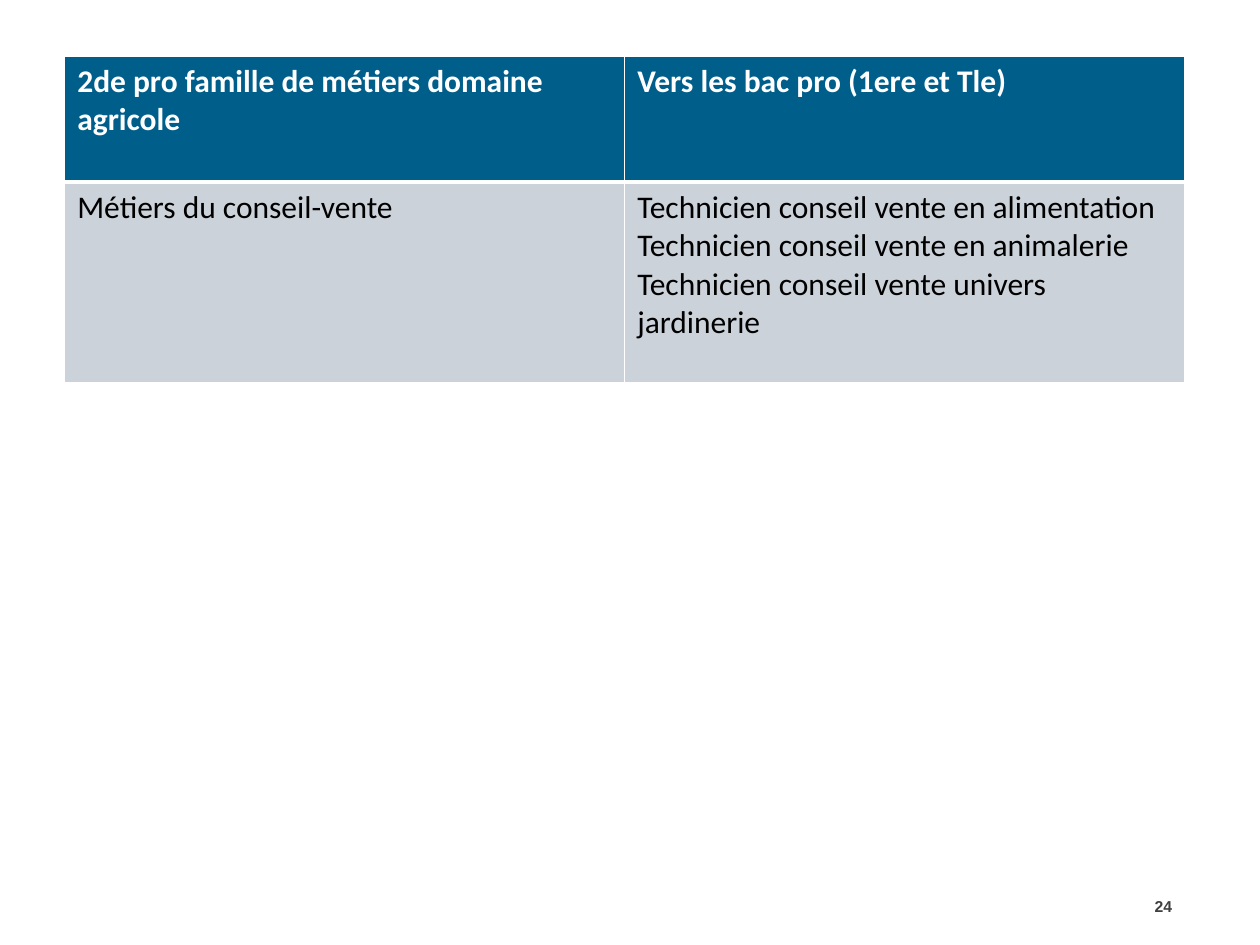
from dataclasses import dataclass

from lxml.etree import SubElement
from pptx import Presentation
from pptx.dml.color import RGBColor
from pptx.enum.text import MSO_ANCHOR, PP_ALIGN
from pptx.oxml.ns import qn
from pptx.util import Pt


@dataclass(frozen=True)
class Theme:
    header_fill: str = "005E8B"
    body_fill: str = "CCD2DA"
    white: str = "FFFFFF"
    black: str = "000000"
    grey: str = "404040"
    table_font: str = "Calibri"
    number_font: str = "Arial"
    table_size: float = 18
    number_size: float = 9
    thin_line: float = 1
    thick_line: float = 3


THEME = Theme()

HEADERS = [
    "2de pro famille de métiers domaine agricole",
    "Vers les bac pro (1ere et Tle)",
]
TRACKS = [
    "Métiers du conseil-vente",
    "Technicien conseil vente en alimentation\n"
    "Technicien conseil vente en animalerie\n"
    "Technicien conseil vente univers jardinerie",
]


def format_text(frame, font_name, size, color, bold, align=PP_ALIGN.LEFT):
    for para in frame.paragraphs:
        para.alignment = align
        for span in para.runs:
            span.font.name = font_name
            span.font.size = Pt(size)
            span.font.bold = bold
            span.font.color.rgb = RGBColor.from_string(color)


def add_borders(cell, top, bottom):
    properties = cell._tc.get_or_add_tcPr()
    widths = {"L": THEME.thin_line, "R": THEME.thin_line, "T": top, "B": bottom}
    for side, width in widths.items():
        line = SubElement(properties, qn(f"a:ln{side}"), w=str(Pt(width)))
        fill = SubElement(line, qn("a:solidFill"))
        SubElement(fill, qn("a:srgbClr"), val=THEME.white)


def fill_row(row, texts, fill, color, bold, top, bottom):
    for cell, text in zip(row.cells, texts):
        cell.text_frame.text = text
        format_text(cell.text_frame, THEME.table_font, THEME.table_size, color, bold)
        # Borders come before the fill in the cell properties
        add_borders(cell, top, bottom)
        cell.fill.solid()
        cell.fill.fore_color.rgb = RGBColor.from_string(fill)


def add_tracks_table(page):
    frame = page.shapes.add_table(2, 2, Pt(37), Pt(32), Pt(640), Pt(187))
    table = frame.table
    for row, height in zip(table.rows, (72, 115)):
        row.height = Pt(height)
    header, body = table.rows
    fill_row(header, HEADERS, THEME.header_fill, THEME.white, True,
             THEME.thin_line, THEME.thick_line)
    fill_row(body, TRACKS, THEME.body_fill, THEME.black, False,
             THEME.thick_line, THEME.thin_line)


def add_page_number(page, number):
    box = page.shapes.add_textbox(Pt(641.5), Pt(503.3), Pt(35.3), Pt(28.8))
    frame = box.text_frame
    frame.word_wrap = True
    frame.vertical_anchor = MSO_ANCHOR.MIDDLE
    frame.text = number
    format_text(frame, THEME.number_font, THEME.number_size, THEME.grey, True,
                PP_ALIGN.RIGHT)


def main():
    deck = Presentation()
    deck.slide_width, deck.slide_height = Pt(720), Pt(540)
    blank_layout = deck.slide_layouts[6]
    page = deck.slides.add_slide(blank_layout)

    # Slide number
    add_page_number(page, "24")
    # Training tracks
    add_tracks_table(page)

    deck.save("out.pptx")


if __name__ == "__main__":
    main()
